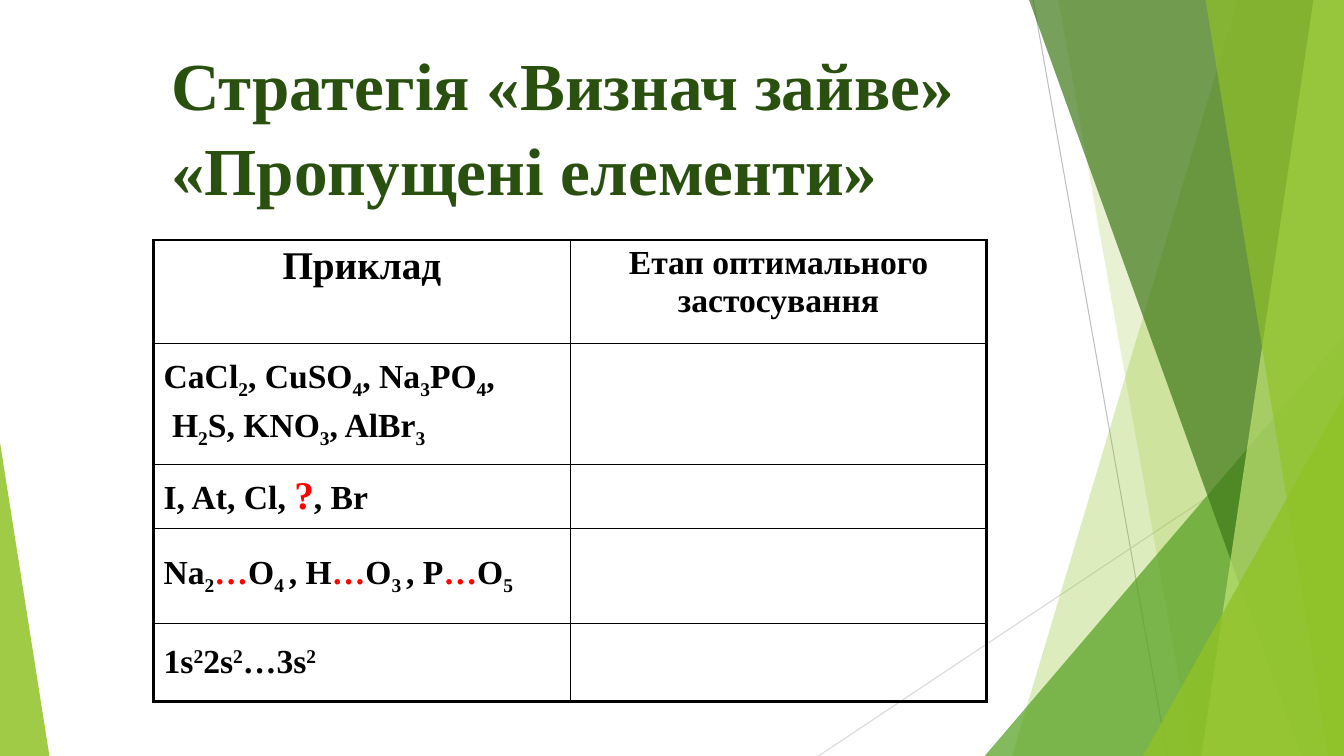
from dataclasses import dataclass
from typing import Any

from lxml.etree import SubElement
from pptx import Presentation
from pptx.dml.color import RGBColor
from pptx.enum.shapes import MSO_CONNECTOR as Connector, MSO_SHAPE as Shape
from pptx.enum.text import MSO_ANCHOR as Anchor, PP_ALIGN as Align
from pptx.oxml.ns import qn
from pptx.util import Pt

WIDTH, HEIGHT = 960, 540
BLACK, RED, TITLE_GREEN, LIME = "000000", "FF0000", "2A5010", "90C226"
THIN, THICK = 1, 2.25


@dataclass
class Band:
    """Facet reaching from a slanted left side to the right slide edge."""
    top_x: float
    bottom_x: float
    color: str
    opacity: int


@dataclass
class Corner:
    """Right triangle standing on the bottom slide edge."""
    left: float
    top: float
    width: float
    apex: float
    color: str
    opacity: int


@dataclass
class Ray:
    x1: float
    y1: float
    x2: float
    y2: float
    color: str


@dataclass
class Row:
    height: float
    cells: list[str]


DECOR = [
    Ray(738, 0, 833.8, HEIGHT, "BFBFBF"),
    Ray(WIDTH, 290.2, 584.6, HEIGHT, "D9D9D9"),
    Band(884.2, 722.9, LIME, 30),
    Band(756, 851.8, LIME, 20),
    Corner(703.4, 239.8, 256.6, 1, "54A021", 72),
    Band(735.1, 929.5, "3F7819", 70),
    Band(938.2, 858.2, "C0E474", 70),
    Band(861.1, 949, LIME, 65),
    Corner(816.5, 283, 143.5, 1, LIME, 80),
    Corner(0, 316.1, 35.3, 0, LIME, 85),
]

# Runs are split by "|"; a leading mark sets the format of its run
MARKS: dict[str, dict[str, Any]] = {
    "_": {"baseline": -25},
    "^": {"baseline": 30},
    "!": {"color": RED},
    "#": {"color": RED, "size": 28},
}
ROWS = [
    Row(74.2, ["Приклад", "Етап оптимального застосування"]),
    Row(86.4, ["CaCl|_2|, CuSО|_4|, Na|_3|PO|_4|,\n H|_2|S, KNO|_3|, AlBr|_3", ""]),
    Row(45.4, ["I, At, Cl, |#?|, Br", ""]),
    Row(67.7, ["Na|_2|!…|O|_4 |, H|!…|O|_3 |, P|!…|O|_5", ""]),
    Row(56.2, ["1s|^2|2s|^2|…3s|^2", ""]),
]


def rgb(color: str) -> RGBColor:
    return RGBColor.from_string(color)


def write(frame: Any, text: str, *, size: float = 24, color: str = BLACK,
          align: Align = Align.LEFT, gap: float = 0, spacing: float = 1) -> None:
    """Fill a text frame, one paragraph a line."""
    frame.word_wrap = True
    for index, line in enumerate(text.split("\n")):
        paragraph = frame.add_paragraph() if index else frame.paragraphs[0]
        paragraph.alignment = align
        paragraph.line_spacing = spacing
        if index:
            paragraph.space_before = Pt(gap)
        for part in filter(None, line.split("|")):
            style = MARKS.get(part[0], {})
            run = paragraph.add_run()
            run.text = part[1:] if style else part
            run.font.name = "Times New Roman"
            run.font.bold = True
            run.font.size = Pt(style.get("size", size))
            run.font.color.rgb = rgb(style.get("color", color))
            if "baseline" in style:
                run.font._element.set("baseline", str(style["baseline"] * 1000))


def paint(shape: Any, color: str, opacity: int) -> None:
    shape.shadow.inherit = False
    shape.line.fill.background()
    shape.fill.solid()
    shape.fill.fore_color.rgb = rgb(color)
    tint = shape.fill._xPr.find(qn("a:solidFill"))[0]
    SubElement(tint, qn("a:alpha")).set("val", str(opacity * 1000))


def draw_ray(shapes: Any, ray: Ray) -> None:
    line = shapes.add_connector(Connector.STRAIGHT, Pt(ray.x1), Pt(ray.y1), Pt(ray.x2), Pt(ray.y2))
    line.line.color.rgb = rgb(ray.color)
    line.line.width = Pt(0.75)
    SubElement(line._element.spPr, qn("a:effectLst"))


def draw_band(shapes: Any, band: Band) -> None:
    outline = shapes.build_freeform(Pt(band.top_x), 0)
    corners = [(WIDTH, 0), (WIDTH, HEIGHT), (band.bottom_x, HEIGHT)]
    outline.add_line_segments([(Pt(x), Pt(y)) for x, y in corners])
    paint(outline.convert_to_shape(), band.color, band.opacity)


def draw_corner(shapes: Any, corner: Corner) -> None:
    triangle = shapes.add_shape(Shape.ISOSCELES_TRIANGLE, Pt(corner.left), Pt(corner.top),
                                Pt(corner.width), Pt(HEIGHT - corner.top))
    triangle.adjustments[0] = corner.apex
    paint(triangle, corner.color, corner.opacity)


def set_border(cell: Any, side: str, width: float) -> None:
    border = SubElement(cell._tc.get_or_add_tcPr(), qn(f"a:ln{side}"), w=str(Pt(width)))
    SubElement(SubElement(border, qn("a:solidFill")), qn("a:srgbClr"), val=BLACK)


def draw_table(shapes: Any, rows: list[Row]) -> None:
    columns = len(rows[0].cells)
    height = sum(row.height for row in rows)
    table = shapes.add_table(len(rows), columns, Pt(109.7), Pt(171.4), Pt(595.2), Pt(height)).table
    table.first_row = table.horz_banding = False
    for r, row in enumerate(rows):
        table.rows[r].height = Pt(row.height)
        for c, text in enumerate(row.cells):
            cell = table.cell(r, c)
            header = r == 0
            cell.vertical_anchor = Anchor.TOP if header else Anchor.MIDDLE
            write(cell.text_frame, text, size=28 if header and c == 0 else 24, gap=4.8,
                  align=Align.CENTER if header else Align.LEFT)
            # Outer edges are thick, inner ones thin
            outer = {"L": c == 0, "R": c == columns - 1, "T": header, "B": r == len(rows) - 1}
            for side, is_outer in outer.items():
                set_border(cell, side, THICK if is_outer else THIN)
            cell.fill.background()


def main() -> None:
    deck = Presentation()
    deck.slide_width, deck.slide_height = Pt(WIDTH), Pt(HEIGHT)
    shapes = deck.slides.add_slide(deck.slide_layouts[6]).shapes

    # Green facets
    painters = {Ray: draw_ray, Band: draw_band, Corner: draw_corner}
    for item in DECOR:
        painters[type(item)](shapes, item)

    # Title
    title = shapes.add_textbox(Pt(115.2), Pt(24.5), Pt(591.1), Pt(123.8))
    write(title.text_frame, "Стратегія «Визнач зайве»\n«Пропущені елементи»",
          size=48, color=TITLE_GREEN, spacing=1.05)

    # Examples
    draw_table(shapes, ROWS)
    deck.save("out.pptx")


if __name__ == "__main__":
    main()
